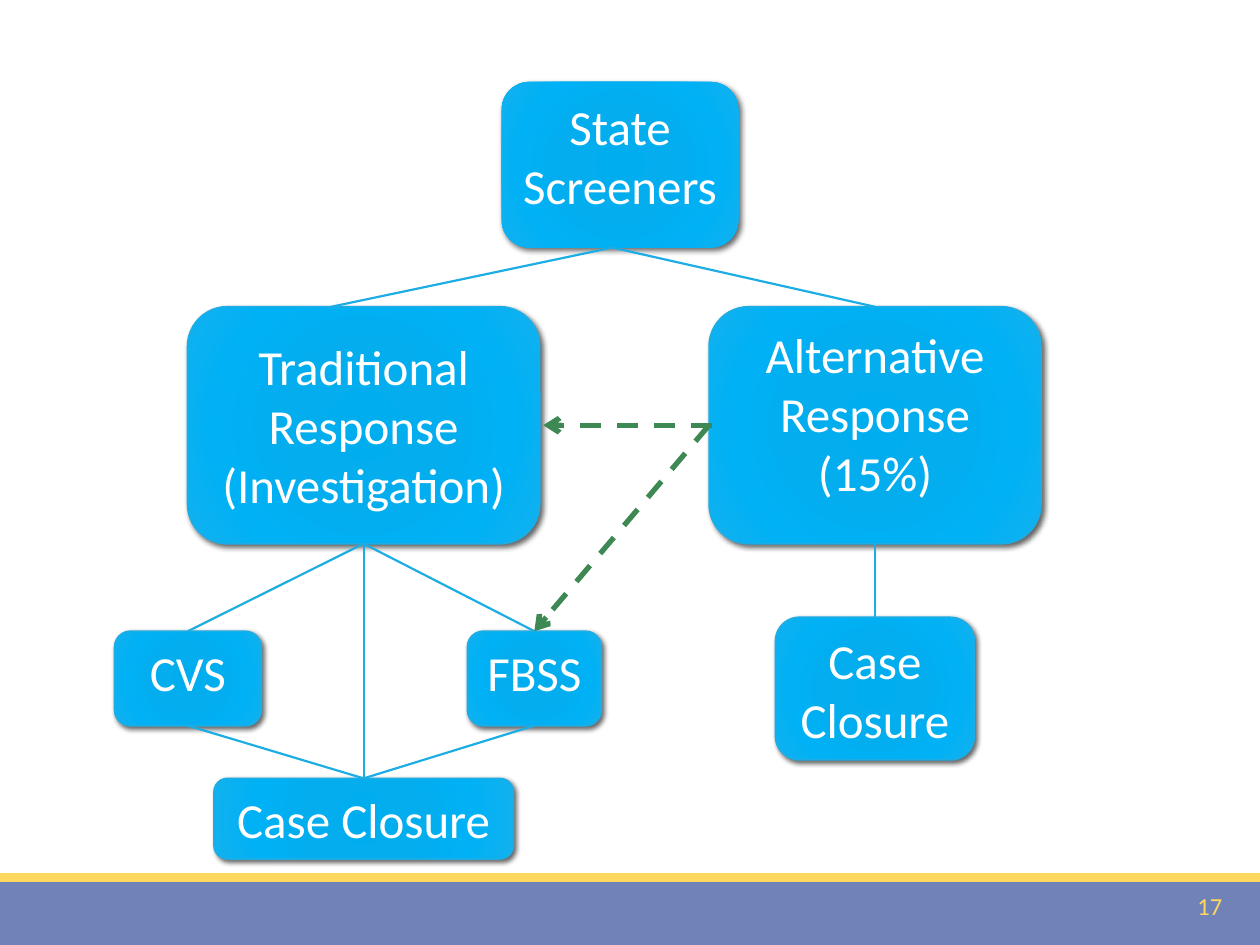
"""Build the case response flow slide."""
from lxml import etree
from pptx import Presentation
from pptx.dml.color import RGBColor
from pptx.enum.dml import MSO_LINE
from pptx.enum.shapes import MSO_CONNECTOR, MSO_SHAPE
from pptx.enum.text import MSO_ANCHOR, PP_ALIGN
from pptx.oxml import parse_xml
from pptx.oxml.ns import nsdecls, qn
from pptx.util import Pt

RECT, ROUNDED = MSO_SHAPE.RECTANGLE, MSO_SHAPE.ROUNDED_RECTANGLE
STRAIGHT, DASH = MSO_CONNECTOR.STRAIGHT, MSO_LINE.DASH
TOP, MIDDLE = MSO_ANCHOR.TOP, MSO_ANCHOR.MIDDLE
CENTER, RIGHT = PP_ALIGN.CENTER, PP_ALIGN.RIGHT
BLUE, GREEN, YELLOW, WHITE = "1CADE4", "3E8853", "FFD85D", "FFFFFF"
STOPS = [(0, "00ADEF"), (34, "03ADEE"), (70, "00B1F5"), (100, "12B1EE")]
GRADIENT = (
    f'<a:gradFill {nsdecls("a")} rotWithShape="1"><a:gsLst>'
    + "".join(f'<a:gs pos="{pos * 1000}"><a:srgbClr val="{color}"/></a:gs>' for pos, color in STOPS)
    + '</a:gsLst><a:path path="circle">'
    '<a:fillToRect l="100000" t="100000" r="100000" b="100000"/></a:path></a:gradFill>'
)
SHADOW = (
    '<a:outerShdw {} blurRad="{}" dist="{}" dir="2700000" algn="br" rotWithShape="0">'
    '<a:srgbClr val="000000"><a:alpha val="60000"/></a:srgbClr></a:outerShdw>'
)


def rgb(color):
    return RGBColor.from_string(color)


def connect(begin, end, color=BLUE, width=1.25):
    points = []
    for name, site, shift in (begin, end):
        sp = boxes[name]
        across, down = [(0.5, 0), (0, 0.5), (0.5, 1), (1, 0.5)][site]
        points += [int(sp.left + sp.width * across + Pt(shift)), int(sp.top + sp.height * down)]
    line = s.shapes.add_connector(STRAIGHT, *points)
    for (name, site, shift), attach in ((begin, line.begin_connect), (end, line.end_connect)):
        if shift == 0:
            attach(boxes[name], site)
    line.line.color.rgb = rgb(color)
    line.line.width = Pt(width)
    etree.SubElement(line._element.spPr, qn("a:effectLst"))
    return line


prs = Presentation()
prs.slide_width, prs.slide_height = Pt(720), Pt(540)
s = prs.slides.add_slide(prs.slide_layouts[6])

for top, height, color in [(504, 36, "7182B8"), (499, 5, YELLOW)]:
    sp = s.shapes.add_shape(RECT, 0, Pt(top), Pt(720), Pt(height))
    sp.shadow.inherit = False
    sp.fill.solid()
    sp.fill.fore_color.rgb = rgb(color)
    sp.line.fill.background()

boxes = {}
for name, left, top, width, height, anchor, lines in [
    ("screeners", 286.6, 46.8, 135.4, 94.7, TOP, ["State", "Screeners"]),
    ("traditional", 107.2, 175.3, 201.2, 135.4, MIDDLE, ["Traditional Response (Investigation)"]),
    ("alternative", 405.2, 175.3, 189.6, 135.4, TOP, ["Alternative Response (15%)"]),
    ("fbss", 267.1, 360.7, 76.5, 54, TOP, ["FBSS"]),
    ("cvs", 65.5, 360.7, 83.8, 54, TOP, ["CVS"]),
    ("alternative closure", 443.2, 352.8, 113.6, 81.4, TOP, ["Case Closure"]),
    ("traditional closure", 122.3, 444.8, 171, 46, MIDDLE, ["Case Closure"]),
]:
    sp = s.shapes.add_shape(ROUNDED, Pt(left), Pt(top), Pt(width), Pt(height))
    boxes[name] = sp
    spPr = sp._element.spPr
    sp.fill.gradient()
    spPr.replace(spPr.find(qn("a:gradFill")), parse_xml(GRADIENT))
    if name == "screeners":
        sp.line.fill.background()
    else:
        sp.line.color.rgb = rgb(BLUE)
        sp.line.width = Pt(1)
    sp.shadow.inherit = False
    blur = Pt(3.5 if name == "screeners" else 3)
    spPr.find(qn("a:effectLst")).append(parse_xml(SHADOW.format(nsdecls("a"), blur, Pt(2))))
    tf = sp.text_frame
    tf.word_wrap = True
    tf.vertical_anchor = anchor
    tf.text = "\n".join(lines)
    for p in tf.paragraphs:
        p.alignment = CENTER
        p.font.name, p.font.size = "Calibri", Pt(28)
        p.font.color.rgb = rgb(WHITE)

for begin, end in [
    (("screeners", 2, -4.4), ("traditional", 0, -18.5)),
    (("screeners", 2, -4.4), ("alternative", 0, 0)),
    (("alternative", 2, 0), ("alternative closure", 0, 0)),
    (("traditional", 2, 0), ("cvs", 0, 0)),
    (("traditional", 2, 0), ("traditional closure", 0, 0)),
    (("fbss", 2, 0), ("traditional closure", 0, 0)),
    (("cvs", 2, 0), ("traditional closure", 0, 0)),
    (("traditional", 2, 0), ("fbss", 0, 0)),
]:
    connect(begin, end)

for begin, end in [
    (("alternative", 1, 1.5), ("traditional", 3, 2)),
    (("alternative", 1, 0), ("fbss", 0, 0)),
]:
    arrow = connect(begin, end, GREEN, 3)
    arrow.line.dash_style = DASH
    etree.SubElement(arrow.line._get_or_add_ln(), qn("a:tailEnd"), type="arrow")

tf = s.shapes.add_textbox(Pt(537.8), Pt(503.3), Pt(167.8), Pt(28.8)).text_frame
tf.word_wrap = True
tf.vertical_anchor = MIDDLE
p = tf.paragraphs[0]
p.text = "17"
p.alignment = RIGHT
p.font.name, p.font.size = "Calibri", Pt(14)
p.font.color.rgb = rgb(YELLOW)

prs.save("out.pptx")
